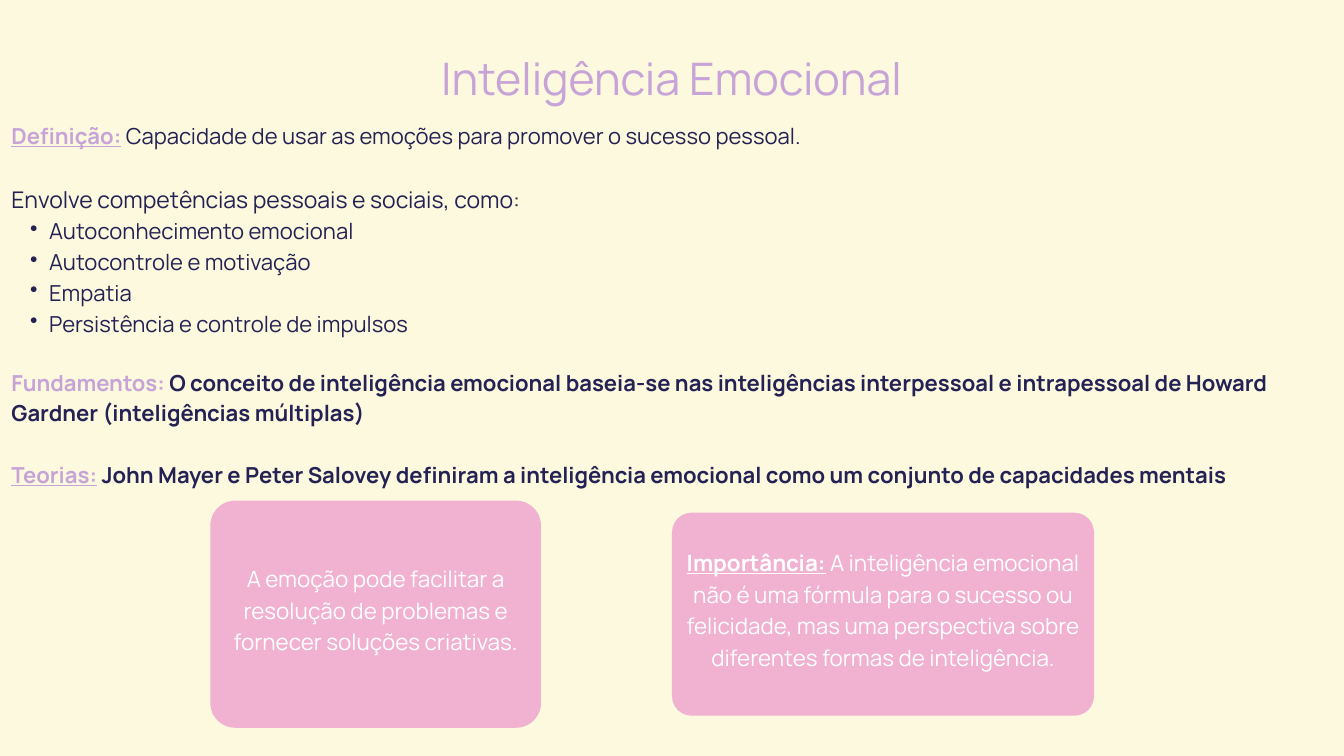
from lxml import etree
from pptx import Presentation
from pptx.dml.color import RGBColor
from pptx.enum import shapes, text
from pptx.oxml import ns
from pptx import util as u

HUES = {"cream": "FDF9DE", "lilac": "C7A3D7", "navy": "242254", "pink": "F0B2D0", "white": "FFFFFF"}
COLS, ROWS = 20, 11.25
UNIT = u.Inches(1)
SKILLS = ["Autoconhecimento emocional", "Autocontrole e motivação", "Empatia",
          "Persistência e controle de impulsos"]


def hue(name):
    """Look up a colour by name."""
    return RGBColor.from_string(HUES[name])


def grid(*cells):
    """Turn columns and rows into lengths."""
    return [round(cell * UNIT) for cell in cells]


def setup(frame, anchor, low=0):
    """Give a text frame plain margins and wrapping."""
    frame.margin_left = frame.margin_right = frame.margin_top = 0
    frame.margin_bottom = round(low * UNIT)
    frame.word_wrap = True
    frame.auto_size = text.MSO_AUTO_SIZE.NONE
    frame.vertical_anchor = anchor


def write(para, runs, size, line, color, align, gap=0):
    """Fill a paragraph with (text, style) runs; styles are b, u and l for lilac."""
    para.alignment = align
    para.line_spacing, para.space_before = u.Pt(line), u.Pt(gap)
    para.font.name, para.font.size = "Manrope", u.Pt(size)
    para.font.color.rgb = hue(color)
    for words, style in runs:
        run = para.add_run()
        run.text = words
        if "b" in style:
            run.font.bold = True
        if "u" in style:
            run.font.underline = True
        if "l" in style:
            run.font.color.rgb = hue("lilac")


def bullet(para):
    """Indent a paragraph and give it a dot."""
    props = para._p.get_or_add_pPr()
    left, hang = grid(0.56, -0.28)
    props.set("marL", str(left))
    props.set("indent", str(hang))
    dot = etree.Element(ns.qn("a:buChar"), char="•")
    last = props.find(ns.qn("a:defRPr"))
    last.addprevious(dot)


def head(slide, box):
    """Place the title."""
    title = slide.shapes.title
    title.left, title.top, title.width, title.height = grid(*box)
    setup(title.text_frame, text.MSO_ANCHOR.TOP)
    write(title.text_frame.paragraphs[0], [("Inteligência Emocional", "")],
          48, 67.2, "lilac", text.PP_ALIGN.CENTER)


def body(slide, box):
    """Place the definition, skills, foundations and theories."""
    frame = slide.shapes.add_textbox(*grid(*box)).text_frame
    setup(frame, text.MSO_ANCHOR.TOP)
    full, left = text.PP_ALIGN.JUSTIFY, text.PP_ALIGN.LEFT
    write(frame.paragraphs[0], [
        ("Definição:", "bul"),
        (" Capacidade de usar as emoções para promover o sucesso pessoal.", "")],
        23.6, 33, "navy", full)
    write(frame.add_paragraph(), [("Envolve competências pessoais e sociais, como:", "")],
          24.6, 34.5, "navy", full, 34.5)
    for skill in SKILLS:
        para = frame.add_paragraph()
        write(para, [(skill, "")], 23.6, 33, "navy", full)
        bullet(para)
    write(frame.add_paragraph(), [
        ("Fundamentos: ", "bl"),
        ("O conceito de inteligência emocional baseia-se nas inteligências interpessoal e "
         "intrapessoal de Howard Gardner (inteligências múltiplas)", "b")],
        23.6, 33, "navy", left, 30.2)
    write(frame.add_paragraph(), [
        ("Teorias:", "bul"),
        (" John Mayer e Peter Salovey definiram a inteligência emocional como um conjunto "
         "de capacidades mentais", "b")],
        23.6, 33, "navy", left, 33)


def card(slide, box, bend, runs):
    """Place a rounded card with centred text."""
    shape = slide.shapes.add_shape(shapes.MSO_SHAPE.ROUNDED_RECTANGLE, *grid(*box))
    shape.adjustments[0] = bend / min(box[2:])
    shape.shadow.inherit = False
    shape.fill.solid()
    shape.fill.fore_color.rgb = hue("pink")
    shape.line.fill.background()
    setup(shape.text_frame, text.MSO_ANCHOR.MIDDLE, 0.19)
    write(shape.text_frame.paragraphs[0], runs, 24, 33.6, "white", text.PP_ALIGN.CENTER)


def main():
    """Build the slide and save it."""
    deck = Presentation()
    deck.slide_width, deck.slide_height = grid(COLS, ROWS)
    slide = deck.slides.add_slide(deck.slide_layouts[5])
    slide.background.fill.solid()
    slide.background.fill.fore_color.rgb = hue("cream")
    body(slide, (0.17, 1.76, 19.83, 5.89))
    card(slide, (3.13, 7.45, 4.92, 3.38), 0.37, [
        ("A emoção pode facilitar a resolução de problemas e fornecer soluções criativas.", "")])
    card(slide, (10, 7.63, 6.28, 3.02), 0.29, [
        ("Importância:", "bu"),
        (" A inteligência emocional não é uma fórmula para o sucesso ou felicidade, mas uma "
         "perspectiva sobre diferentes formas de inteligência.", "")])
    head(slide, (5.91, 0.62, 8.17, 0.9))
    deck.save("out.pptx")


if __name__ == "__main__":
    main()
